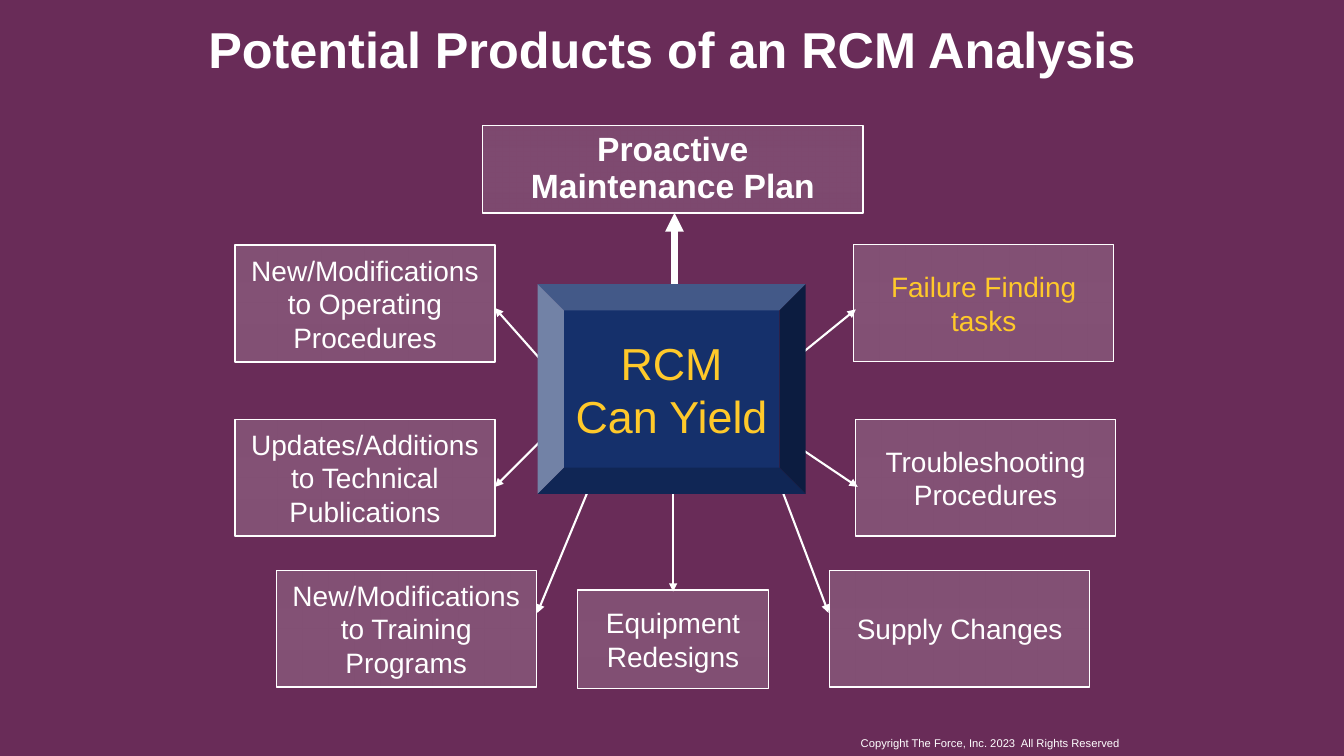
from lxml import etree
from pptx import Presentation
from pptx.dml.color import RGBColor
from pptx.enum.shapes import MSO_CONNECTOR as CONN, MSO_SHAPE as SHAPE
from pptx.enum.text import MSO_ANCHOR as ANCHOR, PP_ALIGN as ALIGN
from pptx.oxml import parse_xml
from pptx.oxml.ns import nsdecls, qn
from pptx.util import Pt

COLORS = {"bg": "692C58", "white": "FFFFFF", "pale": "F8F8F8",
          "gold": "FFC92A", "navy": "15306B"}
FONT = "Arial"

TITLE = ("Potential Products of an RCM Analysis", (129.6, 15.8, 701.3, 40.3))
COPYRIGHT = ("Copyright The Force, Inc. 2023  All Rights Reserved",
             (607.7, 522.7, 203, 17.3))
HUB = ("RCM\vCan Yield", (384, 203, 191.5, 149.8))
PLAN = ("Proactive Maintenance Plan", (344.6, 89.6, 272, 62.6))

BOX_W, BOX_H = 185.8, 83.5
# text, left, top, width, height, color
PRODUCTS = [
    ("New/Modifications to Operating Procedures", 167.8, 175, BOX_W, BOX_H, "white"),
    ("Failure Finding tasks", 609.8, 174.7, BOX_W, BOX_H, "gold"),
    ("Updates/Additions to Technical Publications", 167.8, 299.5, BOX_W, BOX_H, "white"),
    ("New/Modifications to Training Programs", 197.3, 407.3, BOX_W, BOX_H, "white"),
    ("Equipment Redesigns", 412.5, 421.4, 136.5, 70.3, "white"),
    ("Troubleshooting Procedures", 611.1, 299.5, BOX_W, BOX_H, "white"),
    ("Supply Changes", 592.6, 407.3, BOX_W, BOX_H, "white"),
]
# from x, from y, to x, to y, line width
ARROWS = [
    (481.8, 239.8, 481.8, 152, 4.5),
    (390.2, 261.4, 353.5, 220, 1.5),
    (390.2, 311, 353.5, 347.8, 1.5),
    (424.8, 339.1, 383.8, 437.8, 1.5),
    (480.8, 339.1, 480.8, 422.6, 1.5),
    (554.4, 339.1, 591.8, 437.8, 1.5),
    (566.6, 316.8, 612.7, 347.8, 1.5),
    (561.6, 261.4, 611.3, 221, 1.5),
]


def rgb(name):
    return RGBColor.from_string(COLORS[name])


def write(sp, text, size, color="white", bold=False, align=ALIGN.CENTER,
          anchor=ANCHOR.MIDDLE, spacing=None, margins=(7.2, 3.6)):
    tf = sp.text_frame
    tf.word_wrap = True
    tf.vertical_anchor = anchor
    tf.margin_left = tf.margin_right = Pt(margins[0])
    tf.margin_top = tf.margin_bottom = Pt(margins[1])
    p = tf.paragraphs[0]
    p.text = text
    p.alignment = align
    if spacing:
        p.line_spacing = spacing
    for r in p.runs:
        r.font.name, r.font.size, r.font.bold = FONT, Pt(size), bold
        r.font.color.rgb = rgb(color)


def add_label(place, text, size, **style):
    sp = slide.shapes.add_textbox(*map(Pt, place))
    write(sp, text, size, **style)


def add_glass_box(place, text, size, opacity, **style):
    """Outlined box with a translucent white vertical gradient."""
    sp = slide.shapes.add_shape(SHAPE.RECTANGLE, *map(Pt, place))
    sp.shadow.inherit = False
    stops = "".join(
        f'<a:gs pos="{pos}000"><a:srgbClr val="{COLORS[name]}">'
        f'<a:alpha val="{opacity}000"/></a:srgbClr></a:gs>'
        for pos, name in ((0, "pale"), (50, "white"), (100, "pale")))
    gradient = parse_xml(f'<a:gradFill {nsdecls("a")}><a:gsLst>{stops}</a:gsLst>'
                         '<a:lin ang="5400000" scaled="0"/></a:gradFill>')
    sp._element.spPr.find(qn("a:prstGeom")).addnext(gradient)
    sp.line.color.rgb = rgb("white")
    sp.line.width = Pt(1)
    write(sp, text, size, **style)


def add_arrow(x1, y1, x2, y2, width):
    c = slide.shapes.add_connector(CONN.STRAIGHT, Pt(x1), Pt(y1), Pt(x2), Pt(y2))
    c.line.color.rgb = rgb("white")
    c.line.width = Pt(width)
    etree.SubElement(c.line._get_or_add_ln(), qn("a:tailEnd"), type="triangle")
    etree.SubElement(c._element.spPr, qn("a:effectLst"))


def add_hub(text, place):
    sp = slide.shapes.add_shape(SHAPE.BEVEL, *map(Pt, place))
    sp.shadow.inherit = False
    sp.adjustments[0] = 0.125
    sp.fill.solid()
    sp.fill.fore_color.rgb = rgb("navy")
    sp.line.fill.background()
    write(sp, text, 32, color="gold")


prs = Presentation()
prs.slide_width, prs.slide_height = Pt(960), Pt(540)
slide = prs.slides.add_slide(prs.slide_layouts[6])
slide.background.fill.solid()
slide.background.fill.fore_color.rgb = rgb("bg")

add_label(COPYRIGHT[1], COPYRIGHT[0], 8, align=ALIGN.LEFT, anchor=ANCHOR.TOP)
add_glass_box(PLAN[1], PLAN[0], 24, 14, bold=True, spacing=0.9)
for text, *place, color in PRODUCTS:
    add_glass_box(place, text, 20, 17, color=color)
for arrow in ARROWS:
    add_arrow(*arrow)
add_hub(*HUB)
add_label(TITLE[1], TITLE[0], 36, bold=True, anchor=ANCHOR.BOTTOM, margins=(0, 0))

prs.save("out.pptx")
